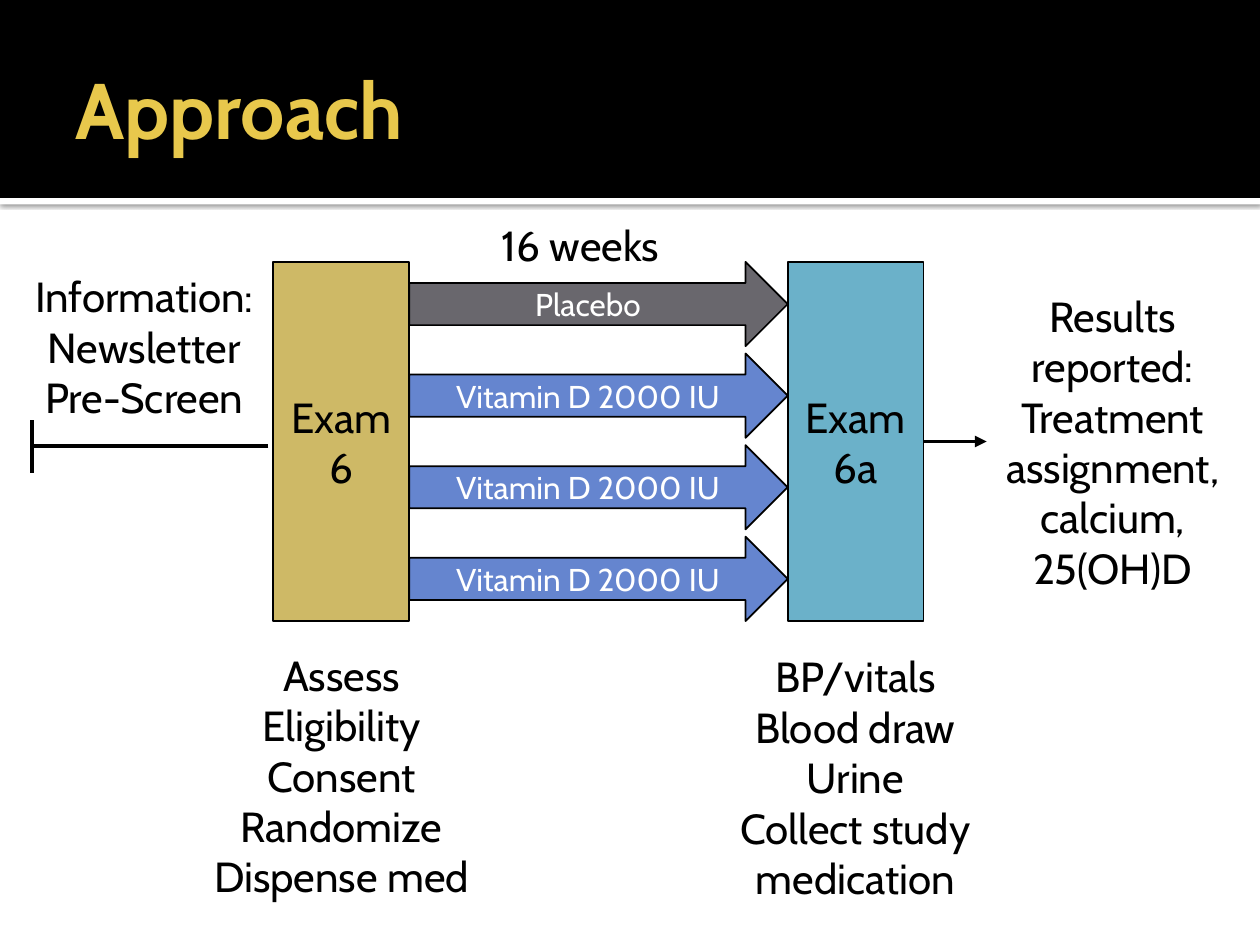
from dataclasses import dataclass

from lxml import etree
from pptx import Presentation
from pptx import util as u
from pptx.dml.color import RGBColor
from pptx.enum import shapes, text
from pptx.oxml import parse_xml
from pptx.oxml.ns import nsdecls, qn

FONT = "Cabin"
COLORS = {
    "black": "000000",
    "white": "FFFFFF",
    "title": "E8C84C",
    "gold": "CEB966",
    "teal": "6BB1C9",
    "gray": "69676D",
    "blue": "6585CF",
}


@dataclass(frozen=True)
class Area:
    """A rectangle in centimetres."""
    left: float
    top: float
    width: float
    height: float

    def lengths(self) -> list:
        return [u.Cm(n) for n in (self.left, self.top, self.width, self.height)]


@dataclass(frozen=True)
class Block:
    kind: shapes.MSO_SHAPE
    area: Area
    fill: str
    label: str
    size: int = 24
    color: str = "black"


@dataclass(frozen=True)
class Note:
    area: Area
    lines: tuple


EXAM_TOP, EXAM_WIDTH, EXAM_HEIGHT = 5.28, 2.74, 7.24
EXAM_6_LEFT, EXAM_6A_LEFT = 5.51, 15.88
ARM_LEFT = EXAM_6_LEFT + EXAM_WIDTH
ARM_WIDTH = EXAM_6A_LEFT - ARM_LEFT
ARM_HEIGHT = 1.7
ARMS = [("Placebo", "gray")] + [("Vitamin D 2000 IU", "blue")] * 3
ARM_STEP = (EXAM_HEIGHT - ARM_HEIGHT) / (len(ARMS) - 1)

EXAM_6 = Block(shapes.MSO_SHAPE.RECTANGLE,
               Area(EXAM_6_LEFT, EXAM_TOP, EXAM_WIDTH, EXAM_HEIGHT), "gold", "Exam 6")
EXAM_6A = Block(shapes.MSO_SHAPE.RECTANGLE,
                Area(EXAM_6A_LEFT, EXAM_TOP, EXAM_WIDTH, EXAM_HEIGHT), "teal", "Exam 6a")
NOTES = [
    Note(Area(0, 5.08, 5.82, 3.81), ("Information:", "Newsletter", "Pre-Screen")),
    Note(Area(19.89, EXAM_TOP, 5.08, EXAM_HEIGHT),
         ("Results reported:", "Treatment assignment, calcium, 25(OH)D")),
    Note(Area(4.04, 12.9, 5.69, 5.46),
         ("Assess", "Eligibility", "Consent", "Randomize", "Dispense med")),
    Note(Area(14.4, 12.93, 5.69, 5.46),
         ("BP/vitals", "Blood draw", "Urine", "Collect study medication")),
    Note(Area(8.86, 4.37, 5.69, 1.12), ("16 weeks",)),
]


def rgb(name: str) -> RGBColor:
    return RGBColor.from_string(COLORS[name])


def write(shape, lines: tuple, size: int, color: str,
          align=text.PP_ALIGN.CENTER, bold: bool = False) -> None:
    frame = shape.text_frame
    frame.word_wrap = True
    frame.vertical_anchor = text.MSO_ANCHOR.MIDDLE
    frame.text = "\n".join(lines)
    for para in frame.paragraphs:
        para.alignment = align
        para.font.name = FONT
        para.font.size = u.Pt(size)
        para.font.bold = bold
        para.font.color.rgb = rgb(color)


def add_filled(page, kind, area: Area, fill: str):
    shape = page.shapes.add_shape(kind, *area.lengths())
    shape.shadow.inherit = False
    shape.fill.solid()
    shape.fill.fore_color.rgb = rgb(fill)
    shape.line.fill.background()
    return shape


def add_block(page, block: Block):
    shape = add_filled(page, block.kind, block.area, block.fill)
    shape.line.color.rgb = rgb("black")
    shape.line.width = u.Pt(1)
    write(shape, (block.label,), block.size, block.color)
    return shape


def add_note(page, note: Note) -> None:
    box = page.shapes.add_textbox(*note.area.lengths())
    write(box, note.lines, 24, "black")


def add_line(page, x1: float, y1: float, x2: float, y2: float):
    line = page.shapes.add_connector(
        shapes.MSO_CONNECTOR.STRAIGHT, *(u.Cm(n) for n in (x1, y1, x2, y2)))
    line.line.color.rgb = rgb("black")
    line.line.width = u.Pt(2.25)
    etree.SubElement(line._element.spPr, qn("a:effectLst"))
    return line


def add_header(page) -> None:
    """Draw the black band, the shadowed strip below it and the title."""
    strip = add_filled(page, shapes.MSO_SHAPE.RECTANGLE, Area(0, 3.99, 25.4, 0.13), "white")
    strip._element.spPr.find(qn("a:effectLst")).append(parse_xml(
        f'<a:outerShdw {nsdecls("a")} blurRad="31750" dist="10160" dir="5400000" '
        f'algn="tl" rotWithShape="0"><a:srgbClr val="{COLORS["black"]}">'
        '<a:alpha val="60000"/></a:srgbClr></a:outerShdw>'))
    add_filled(page, shapes.MSO_SHAPE.RECTANGLE, Area(0, 0, 25.4, 3.99), "black")
    title = page.shapes.add_textbox(*Area(1.27, 0.43, 22.86, 3.48).lengths())
    title.text_frame.margin_right = u.Cm(0.13)
    write(title, ("Approach",), 45, "title", text.PP_ALIGN.LEFT, bold=True)


def main() -> None:
    deck = Presentation()
    deck.slide_width, deck.slide_height = u.Cm(25.4), u.Cm(19.05)
    page = deck.slides.add_slide(deck.slide_layouts[6])

    add_header(page)
    add_block(page, EXAM_6)
    exam_6a = add_block(page, EXAM_6A)
    for row, (label, fill) in enumerate(ARMS):
        area = Area(ARM_LEFT, EXAM_TOP + row * ARM_STEP, ARM_WIDTH, ARM_HEIGHT)
        add_block(page, Block(shapes.MSO_SHAPE.RIGHT_ARROW, area, fill, label, 18, "white"))

    add_line(page, 5.41, 8.99, 0.64, 8.99)
    add_line(page, 0.64, 9.53, 0.64, 8.46)
    middle = EXAM_TOP + EXAM_HEIGHT / 2
    results = add_line(page, EXAM_6A_LEFT + EXAM_WIDTH, middle, 19.89, middle)
    results.begin_connect(exam_6a, 3)
    etree.SubElement(results.line._get_or_add_ln(), qn("a:tailEnd"), type="triangle")

    for note in NOTES:
        add_note(page, note)
    deck.save("out.pptx")


if __name__ == "__main__":
    main()
